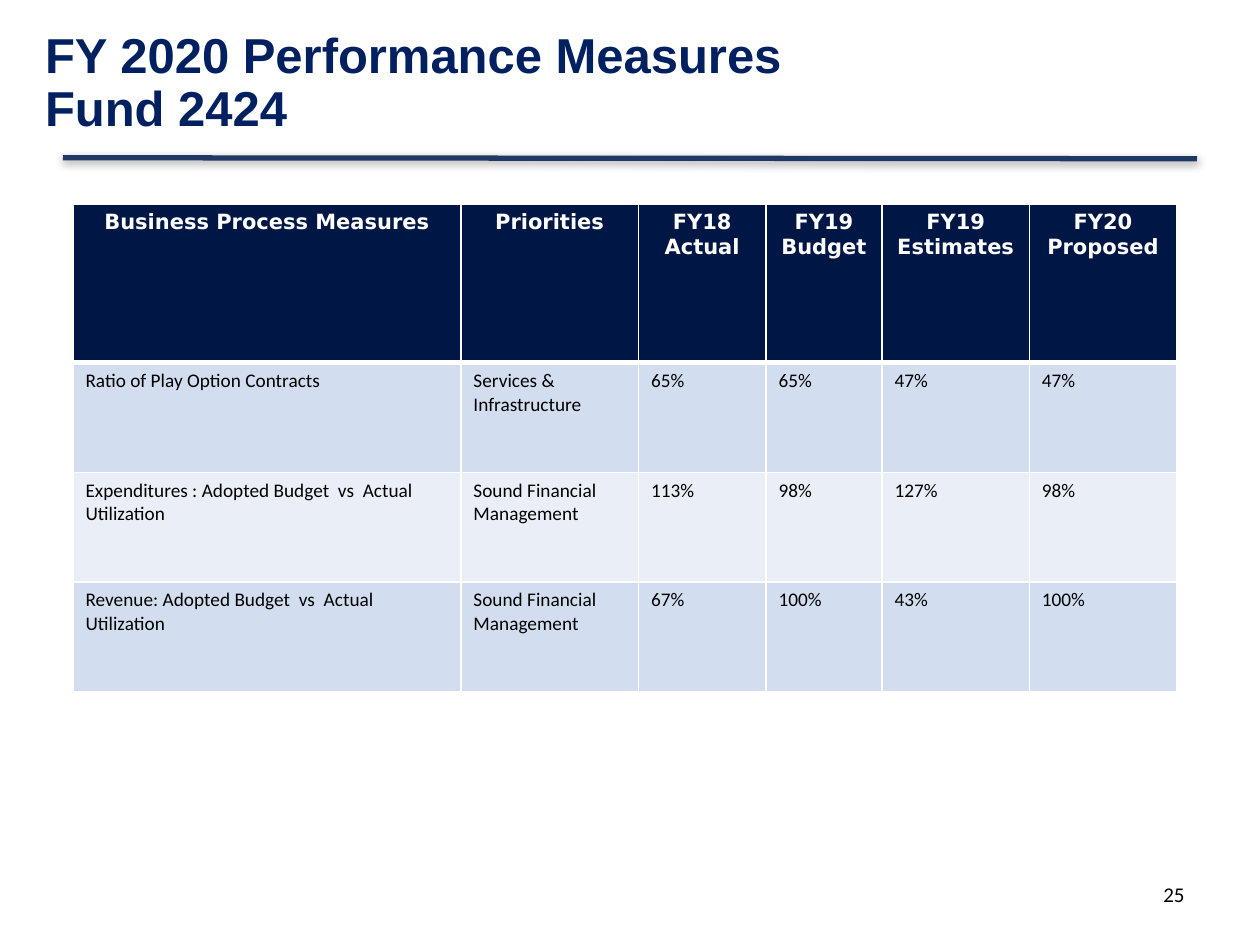
from typing import NamedTuple

from lxml.etree import SubElement
from pptx import Presentation
from pptx.dml.color import RGBColor
from pptx.enum.shapes import MSO_CONNECTOR
from pptx.enum.text import MSO_ANCHOR, MSO_AUTO_SIZE, PP_ALIGN
from pptx.oxml.ns import qn
from pptx.util import Cm, Pt

NAVY = RGBColor(0x00, 0x20, 0x60)
RULE_BLUE = RGBColor(0x20, 0x38, 0x64)
HEADER_FILL = RGBColor(0x00, 0x17, 0x46)
BAND_DARK = RGBColor(0xD2, 0xDE, 0xEF)
BAND_LIGHT = RGBColor(0xEA, 0xEF, 0xF7)
WHITE = RGBColor(0xFF, 0xFF, 0xFF)
BLACK = RGBColor(0x00, 0x00, 0x00)


class TextStyle(NamedTuple):
    font: str
    size: float
    color: RGBColor
    bold: bool = False
    align: PP_ALIGN = PP_ALIGN.LEFT


class Measure(NamedTuple):
    name: str
    priority: str
    fy18_actual: str
    fy19_budget: str
    fy19_estimates: str
    fy20_proposed: str


TITLE = TextStyle("Arial", 28, NAVY, bold=True)
HEADER = TextStyle("DejaVu Sans", 12, WHITE, bold=True, align=PP_ALIGN.CENTER)
BODY = TextStyle("Calibri", 11, BLACK)
PAGE_NUMBER = TextStyle("Calibri", 12, BLACK, align=PP_ALIGN.RIGHT)

HEADINGS = Measure("Business Process Measures", "Priorities", "FY18\nActual",
                   "FY19\nBudget", "FY19\nEstimates", "FY20\nProposed")
MEASURES = [
    Measure("Ratio of Play Option Contracts", "Services & Infrastructure",
            "65%", "65%", "47%", "47%"),
    Measure("Expenditures : Adopted Budget  vs  Actual Utilization",
            "Sound Financial Management", "113%", "98%", "127%", "98%"),
    Measure("Revenue: Adopted Budget  vs  Actual Utilization",
            "Sound Financial Management", "67%", "100%", "43%", "100%"),
]
COLUMN_WIDTHS = [7.82, 3.58, 2.57, 2.34, 2.97, 2.97]
HEADER_HEIGHT, ROW_HEIGHT = 3.2, 2.21


def write(tf, text: str, style: TextStyle) -> None:
    tf.text = text
    for p in tf.paragraphs:
        p.alignment = style.align
        for r in p.runs:
            r.font.name = style.font
            r.font.size = Pt(style.size)
            r.font.bold = style.bold
            r.font.color.rgb = style.color


def add_border(cell, side: str, width: float) -> None:
    ln = SubElement(cell._tc.get_or_add_tcPr(), qn(f"a:ln{side}"), w=str(Pt(width)))
    fill = SubElement(ln, qn("a:solidFill"))
    SubElement(fill, qn("a:srgbClr"), val=str(WHITE))


def fill_row(table, index: int, measure: Measure, style: TextStyle,
             color: RGBColor) -> None:
    # The line under the header is thicker than the others
    top, bottom = {0: (1, 3), 1: (3, 1)}.get(index, (1, 1))
    for cell, text in zip(table.rows[index].cells, measure):
        write(cell.text_frame, text, style)
        for side, width in zip("LRTB", (1, 1, top, bottom)):
            add_border(cell, side, width)
        cell.fill.solid()
        cell.fill.fore_color.rgb = color


def add_shadow(connector) -> None:
    effects = SubElement(connector._element.spPr, qn("a:effectLst"))
    shadow = SubElement(effects, qn("a:outerShdw"), blurRad=str(Pt(5)),
                        dist=str(Pt(1.6)), dir="5400000", rotWithShape="0")
    color = SubElement(shadow, qn("a:srgbClr"), val=str(BLACK))
    SubElement(color, qn("a:alpha"), val="38000")


def main() -> None:
    prs = Presentation()
    prs.slide_width, prs.slide_height = Cm(25.4), Cm(19.05)
    s = prs.slides.add_slide(prs.slide_layouts[5])

    # Rule under the title
    rule = s.shapes.add_connector(MSO_CONNECTOR.STRAIGHT, Cm(1.27), Cm(3.18),
                                  Cm(24.13), Cm(3.2))
    rule.line.color.rgb = RULE_BLUE
    rule.line.width = Pt(3)
    add_shadow(rule)

    # Title, raised by its bottom margin
    title = s.shapes.title
    title.left, title.top, title.width, title.height = Cm(0.91), Cm(1.07), Cm(17.42), Cm(2.34)
    tf = title.text_frame
    write(tf, "FY 2020 Performance Measures\vFund 2424", TITLE)
    tf.word_wrap = True
    tf.auto_size = MSO_AUTO_SIZE.NONE
    tf.vertical_anchor = MSO_ANCHOR.MIDDLE
    tf.margin_left = tf.margin_right = tf.margin_top = 0
    tf.margin_bottom = Cm(1.1)
    tf.paragraphs[0].line_spacing = 0.9

    # Performance table
    frame = s.shapes.add_table(
        len(MEASURES) + 1, len(COLUMN_WIDTHS), Cm(1.47), Cm(4.11),
        Cm(sum(COLUMN_WIDTHS)), Cm(HEADER_HEIGHT + ROW_HEIGHT * len(MEASURES)))
    table = frame.table
    for column, width in zip(table.columns, COLUMN_WIDTHS):
        column.width = Cm(width)
    for i, row in enumerate(table.rows):
        row.height = Cm(ROW_HEIGHT if i else HEADER_HEIGHT)
    fill_row(table, 0, HEADINGS, HEADER, HEADER_FILL)
    for i, measure in enumerate(MEASURES, start=1):
        fill_row(table, i, measure, BODY, BAND_DARK if i % 2 else BAND_LIGHT)

    # Page number
    number = s.shapes.add_textbox(Cm(18.21), Cm(17.65), Cm(5.92), Cm(1.02))
    number.text_frame.word_wrap = True
    write(number.text_frame, "25", PAGE_NUMBER)

    prs.save("out.pptx")


if __name__ == "__main__":
    main()
